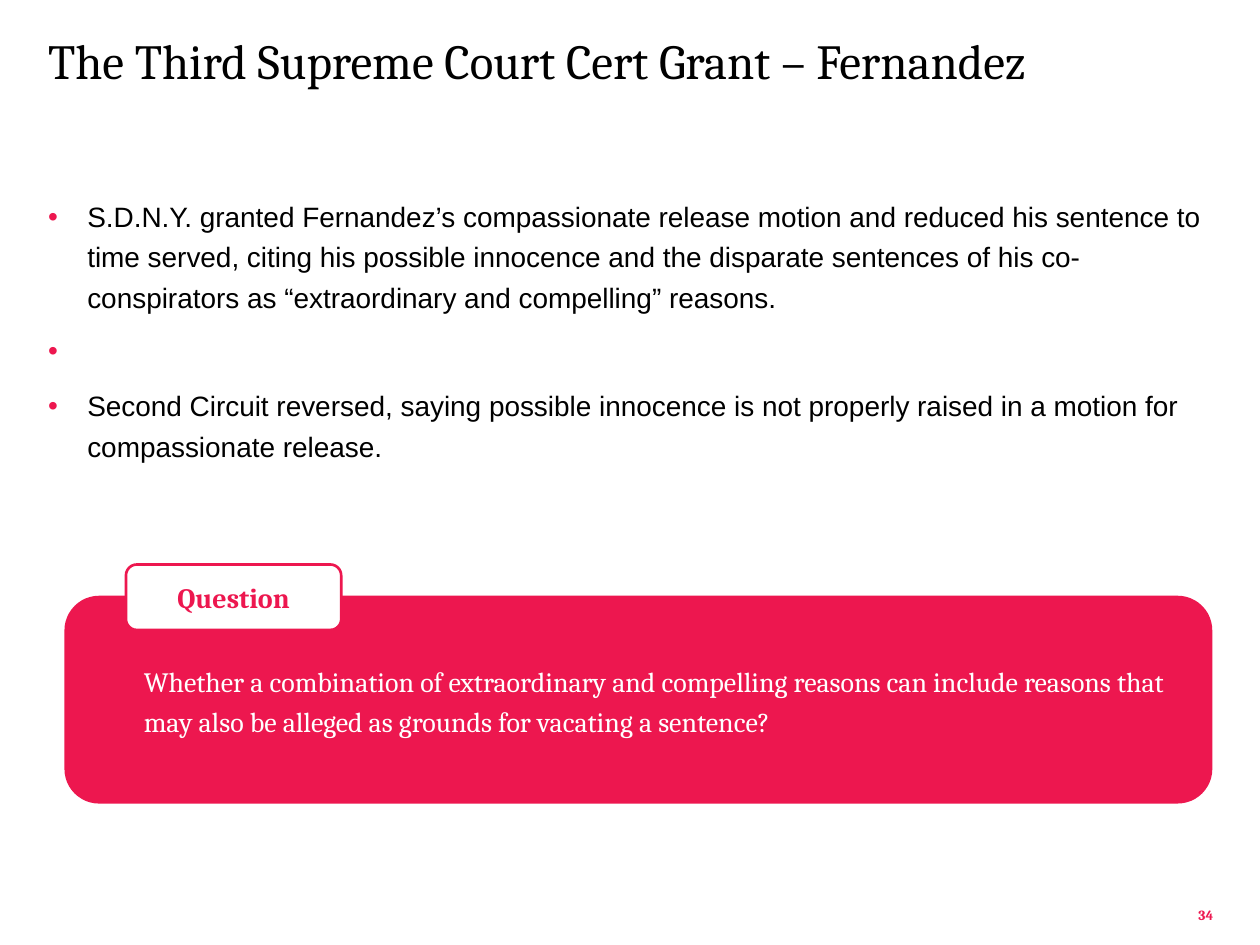
from lxml.etree import SubElement
from pptx import Presentation
from pptx.dml.color import RGBColor
from pptx.enum.shapes import MSO_SHAPE
from pptx.enum.text import MSO_ANCHOR, MSO_AUTO_SIZE, PP_ALIGN
from pptx.oxml.ns import qn
from pptx.util import Cm, Pt

COLORS = {"accent": "ED174F", "text": "000000", "light": "FFFFFF"}


def place(shape, left, top, width, height):
    """Position a shape, with lengths in centimetres."""
    shape.left, shape.top, shape.width, shape.height = map(Cm, (left, top, width, height))


def format_text(frame, font, size, color, anchor=MSO_ANCHOR.TOP, align=PP_ALIGN.LEFT,
                line_spacing=1.0, space_after=0, bold=False):
    frame.word_wrap = True
    frame.auto_size = MSO_AUTO_SIZE.NONE
    frame.vertical_anchor = anchor
    frame.margin_left = frame.margin_right = frame.margin_top = frame.margin_bottom = 0
    for paragraph in frame.paragraphs:
        paragraph.alignment = align
        paragraph.line_spacing = line_spacing
        paragraph.space_before = Pt(0)
        paragraph.space_after = Pt(space_after)
        for run in paragraph.runs:
            run.font.name = font
            run.font.size = Pt(size)
            run.font.bold = bold
            run.font.color.rgb = RGBColor.from_string(COLORS[color])


prs = Presentation()
prs.slide_width, prs.slide_height = Cm(25.4), Cm(19.05)
slide = prs.slides.add_slide(prs.slide_layouts[1])
accent = RGBColor.from_string(COLORS["accent"])

# Title
title = slide.shapes.title
place(title, 0.97, 0.74, 23.5, 1.07)
title.text_frame.text = "The Third Supreme Court Cert Grant – Fernandez"
format_text(title.text_frame, "Cambria", 28, "text", line_spacing=0.9)

# Rulings of the lower courts; the middle bullet stands alone
rulings = slide.placeholders[1]
place(rulings, 0.97, 3.89, 23.5, 6.35)
rulings.text_frame.text = "\n".join([
    "S.D.N.Y. granted Fernandez’s compassionate release motion and reduced his sentence "
    "to time served, citing his possible innocence and the disparate sentences of his "
    "co-conspirators as “extraordinary and compelling” reasons.",
    " ",
    "Second Circuit reversed, saying possible innocence is not properly raised in a "
    "motion for compassionate release.",
])
for paragraph in rulings.text_frame.paragraphs:
    properties = paragraph._p.get_or_add_pPr()
    properties.set("marL", str(Cm(0.79)))
    properties.set("indent", str(-Cm(0.79)))
    bullet_color = SubElement(properties, qn("a:buClr"))
    SubElement(bullet_color, qn("a:srgbClr"), val=COLORS["accent"])
    SubElement(properties, qn("a:buFont"), typeface="Arial")
    SubElement(properties, qn("a:buChar"), char="•")
format_text(rulings.text_frame, "Arial", 16, "text", line_spacing=1.2, space_after=8)

# Question panel
panel = slide.shapes.add_shape(MSO_SHAPE.ROUNDED_RECTANGLE,
                               Cm(1.3), Cm(12.01), Cm(23.14), Cm(4.19))
panel.shadow.inherit = False
panel.fill.solid()
panel.fill.fore_color.rgb = accent
panel.line.fill.background()

question = slide.shapes.add_textbox(Cm(2.9), Cm(13.26), Cm(20.65), Cm(1.88))
question.text_frame.text = ("Whether a combination of extraordinary and compelling reasons can include "
                            "reasons that may also be alleged as grounds for vacating a sentence?")
format_text(question.text_frame, "Cambria", 16, "light", line_spacing=1.2, space_after=8)

question_tab = slide.shapes.add_shape(MSO_SHAPE.ROUNDED_RECTANGLE,
                                      Cm(2.54), Cm(11.38), Cm(4.34), Cm(1.32))
question_tab.shadow.inherit = False
question_tab.fill.solid()
question_tab.fill.fore_color.rgb = RGBColor.from_string(COLORS["light"])
question_tab.line.color.rgb = accent
question_tab.line.width = Pt(1.5)
question_tab.text_frame.text = "Question"
format_text(question_tab.text_frame, "Cambria", 16, "accent",
            anchor=MSO_ANCHOR.MIDDLE, align=PP_ALIGN.CENTER, bold=True)

# Page number
page_number = slide.shapes.add_textbox(Cm(23.75), Cm(18.08), Cm(0.71), Cm(0.53))
page_number.text_frame.text = "34"
format_text(page_number.text_frame, "Cambria", 8, "accent", anchor=MSO_ANCHOR.BOTTOM,
            align=PP_ALIGN.RIGHT, line_spacing=0.9, bold=True)

prs.save("out.pptx")
